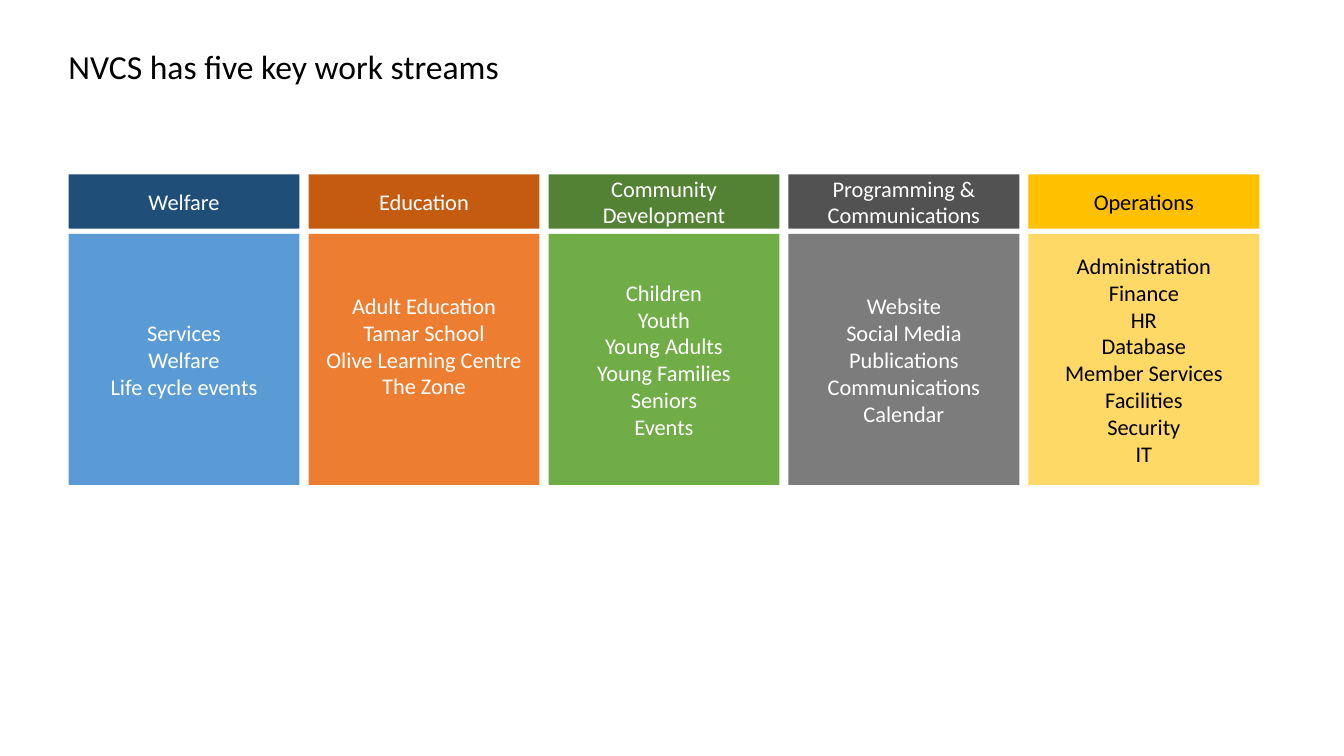
"""Build a slide showing five work streams as headed, coloured columns."""
from pptx import Presentation
from pptx.dml.color import RGBColor
from pptx.enum.shapes import MSO_SHAPE
from pptx.enum.text import MSO_ANCHOR, PP_ALIGN
from pptx.util import Inches, Pt

RECTANGLE = MSO_SHAPE.RECTANGLE
MIDDLE = MSO_ANCHOR.MIDDLE
LEFT, CENTER = PP_ALIGN.LEFT, PP_ALIGN.CENTER

FIRST_LEFT, COLUMN_STEP, COLUMN_WIDTH = 0.68, 2.38, 2.29
HEADER_TOP, HEADER_HEIGHT = 1.73, 0.54
BODY_TOP, BODY_HEIGHT = 2.32, 2.49

STREAMS = [
    ("Welfare", "1F4E79", "5B9BD5", "FFFFFF", 0.05,
     ["Services", "Welfare", "Life cycle events"]),
    ("Education", "C55A11", "ED7D31", "FFFFFF", 0.32,
     ["Adult Education", "Tamar School", "Olive Learning Centre", "The Zone"]),
    ("Community Development", "548235", "70AD47", "FFFFFF", 0.05,
     ["Children", "Youth", "Young Adults", "Young Families", "Seniors", "Events"]),
    ("Programming & Communications", "525252", "7C7C7C", "FFFFFF", 0.05,
     ["Website", "Social Media", "Publications", "Communications", "Calendar"]),
    ("Operations", "FFC000", "FFD966", "000000", 0.05,
     ["Administration", "Finance", "HR", "Database", "Member Services",
      "Facilities", "Security", "IT"]),
]


def color(hex_code):
    return RGBColor.from_string(hex_code)


def write_lines(box, lines, size, text_color, alignment):
    frame = box.text_frame
    frame.word_wrap = True
    frame.vertical_anchor = MIDDLE
    frame.text = "\n".join(lines)
    for para in frame.paragraphs:
        para.alignment = alignment
        para.font.name = "Calibri"
        para.font.size = Pt(size)
        para.font.color.rgb = color(text_color)


deck = Presentation()
deck.slide_width, deck.slide_height = Inches(13.33), Inches(7.5)
page = deck.slides.add_slide(deck.slide_layouts[6])

title = page.shapes.add_textbox(Inches(0.58), Inches(0.4), Inches(11.5), Inches(0.57))
write_lines(title, ["NVCS has five key work streams"], 24, "000000", LEFT)
title.text_frame.paragraphs[0].line_spacing = 0.9

for index, (name, dark, light, text_color, bottom_margin, topics) in enumerate(STREAMS):
    left = FIRST_LEFT + index * COLUMN_STEP
    parts = [
        (BODY_TOP, BODY_HEIGHT, light, topics, bottom_margin),
        (HEADER_TOP, HEADER_HEIGHT, dark, [name], 0.05),
    ]
    for top, height, fill, lines, margin in parts:
        box = page.shapes.add_shape(
            RECTANGLE, Inches(left), Inches(top), Inches(COLUMN_WIDTH), Inches(height))
        box.shadow.inherit = False
        box.fill.solid()
        box.fill.fore_color.rgb = color(fill)
        box.line.fill.background()
        box.text_frame.margin_bottom = Inches(margin)
        write_lines(box, lines, 16, text_color, CENTER)

deck.save("out.pptx")
